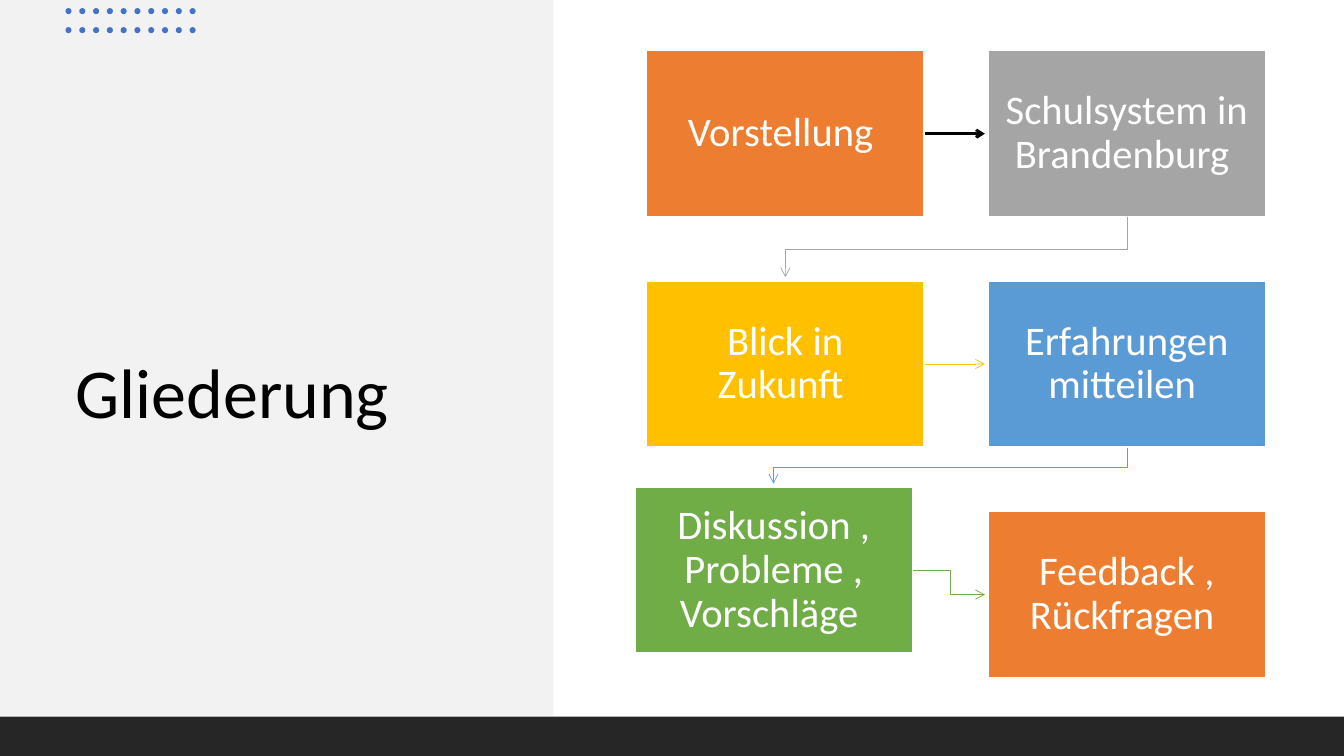
from lxml import etree
from pptx import Presentation
from pptx import util as u
from pptx.dml import color
from pptx.enum import shapes, text
from pptx.oxml import ns

Pt = u.Pt


def paint(target, value):
    if hasattr(target, "solid"):
        target.solid()
        target.fore_color.rgb = color.RGBColor.from_string(value)
    else:
        target.rgb = color.RGBColor.from_string(value)


def add_block(kind, left, top, width, height, fill):
    shape = slide.shapes.add_shape(kind, Pt(left), Pt(top), Pt(width), Pt(height))
    shape.shadow.inherit = False
    paint(shape.fill, fill)
    shape.line.fill.background()
    return shape


presentation = Presentation()
presentation.slide_width = Pt(960)
presentation.slide_height = Pt(540)
slide = presentation.slides.add_slide(presentation.slide_layouts[5])
rectangle = shapes.MSO_SHAPE.RECTANGLE

title = slide.shapes.title
title.left, title.top, title.width, title.height = Pt(46.8), Pt(95), Pt(305.3), Pt(320.4)
frame = title.text_frame
frame.word_wrap = True
frame.auto_size = text.MSO_AUTO_SIZE.NONE
frame.vertical_anchor = text.MSO_ANCHOR.MIDDLE
frame.margin_top = Pt(58)
paragraph = frame.paragraphs[0]
paragraph.alignment = text.PP_ALIGN.LEFT
paragraph.line_spacing = 0.9
run = paragraph.add_run()
run.text = "Gliederung"
run.font.name = "Calibri"
run.font.size = Pt(50)
paint(run.font.color, "000000")

panel = add_block(rectangle, 0, 0, 395.3, 511.2, "F2F2F2")
title.element.addprevious(panel.element)

for row in range(2):
    for column in range(10):
        add_block(shapes.MSO_SHAPE.OVAL, 46.8 + 9.85 * column, 5.8 + 13.6 * row, 4.3, 4.3, "4472C4")

add_block(rectangle, 0, 511.9, 960, 28.1, "262626")

box_width, box_height = 198.3, 118.5
left_column, right_column = 461.8, 705.8
first_row, second_row, third_row = 36, 200.7, 365.3
steps = [
    ("Vorstellung ", left_column, first_row, "ED7D31"),
    ("Schulsystem in Brandenburg ", right_column, first_row, "A5A5A5"),
    ("Blick in Zukunft ", left_column, second_row, "FFC000"),
    ("Erfahrungen mitteilen ", right_column, second_row, "5B9BD5"),
    ("Diskussion , Probleme , Vorschläge ", 453.6, 348, "70AD47"),
    ("Feedback , Rückfragen ", right_column, third_row, "ED7D31"),
]

for label, left, top, fill in steps:
    box = add_block(rectangle, left, top, box_width, box_height, fill)
    paint(box.line.fill, "FFFFFF")
    box.line.width = Pt(1)
    frame = box.text_frame
    frame.word_wrap = True
    frame.vertical_anchor = text.MSO_ANCHOR.MIDDLE
    frame.margin_left = frame.margin_right = Pt(9.6)
    frame.margin_top = frame.margin_bottom = Pt(10.1)
    paragraph = frame.paragraphs[0]
    paragraph.alignment = text.PP_ALIGN.CENTER
    paragraph.line_spacing = 0.9
    run = paragraph.add_run()
    run.text = label
    run.font.name = "Calibri"
    run.font.size = Pt(29)
    paint(run.font.color, "FFFFFF")

arrows = [
    ("000000", 2, [(660.5, 95.5), (703.5, 95.5)]),
    ("A5A5A5", 0.5, [(805, 154.8), (805, 178), (561, 178), (561, 198)]),
    ("FFC000", 0.5, [(660.5, 260), (703.5, 260)]),
    ("5B9BD5", 0.5, [(805, 319.7), (805, 333.8), (552.5, 333.8), (552.5, 345.4)]),
    ("70AD47", 0.5, [(652, 407.3), (679, 407.3), (679, 424.7), (703.5, 424.7)]),
]

for stroke, width, points in arrows:
    points = [(Pt(x), Pt(y)) for x, y in points]
    if len(points) == 2:
        arrow = slide.shapes.add_connector(shapes.MSO_CONNECTOR.STRAIGHT, *points[0], *points[1])
        etree.SubElement(arrow.element.spPr, ns.qn("a:effectLst"))
    else:
        builder = slide.shapes.build_freeform(*points[0])
        builder.add_line_segments(points[1:], close=False)
        arrow = builder.convert_to_shape()
        arrow.fill.background()
        arrow.shadow.inherit = False
    paint(arrow.line.fill, stroke)
    arrow.line.width = Pt(width)
    line = arrow.element.spPr.find(ns.qn("a:ln"))
    etree.SubElement(line, ns.qn("a:tailEnd"), type="arrow")

presentation.save("out.pptx")
